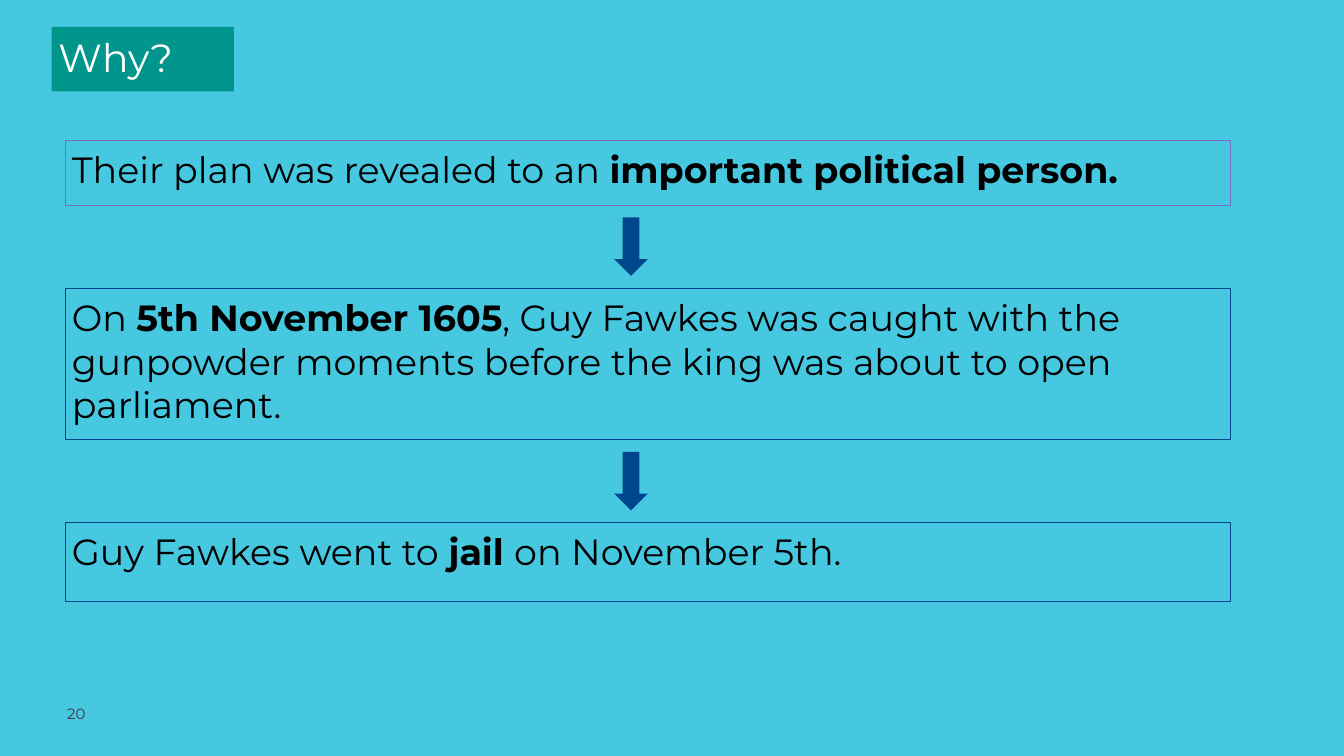
import pptx
import pptx.dml.color
import pptx.enum.shapes
import pptx.enum.text
import pptx.util

RGBColor = pptx.dml.color.RGBColor
SKY = RGBColor(0x46, 0xC8, 0xE1)
TEAL = RGBColor(0x00, 0x96, 0x8C)
NAVY = RGBColor(0x00, 0x46, 0x8C)
VIOLET = RGBColor(0x78, 0x6E, 0xC8)
PLUM = RGBColor(0x4B, 0x32, 0x41)
WHITE = RGBColor(0xFF, 0xFF, 0xFF)
BLACK = RGBColor(0x00, 0x00, 0x00)

CELL = pptx.util.Inches(0.2)
LINK_HEIGHT = 6.2
ARROW_WIDTH, ARROW_HEIGHT = 2.5, 4.35
ARROW_SHIFT = -1.25

EVENTS = [
    (4.8, VIOLET, [("Their plan was revealed to an ", False),
                   ("important political person.", True)]),
    (11.25, NAVY, [("On ", False), ("5th November 1605", True),
                   (", Guy Fawkes was caught with the gunpowder moments before "
                    "the king was about to open parliament.", False)]),
    (5.85, NAVY, [("Guy Fawkes went to ", False), ("jail ", True),
                  ("on November 5th.", False)]),
]


def cells(*box):
    return [round(value * CELL) for value in box]


def write(holder, runs, size, color, inset=0.5):
    frame = holder.text_frame
    frame.word_wrap = True
    frame.auto_size = pptx.enum.text.MSO_AUTO_SIZE.NONE
    frame.vertical_anchor = pptx.enum.text.MSO_ANCHOR.TOP
    frame.margin_left = frame.margin_right = round(inset * CELL)
    frame.margin_top = frame.margin_bottom = round(inset * CELL)
    paragraph = frame.paragraphs[0]
    paragraph.alignment = pptx.enum.text.PP_ALIGN.LEFT
    paragraph.line_spacing = 1.0
    for words, bold in runs:
        run = paragraph.add_run()
        run.text = words
        run.font.name = "Montserrat"
        run.font.size = pptx.util.Pt(size)
        run.font.bold = bold
        run.font.color.rgb = color


def place_heading(slide, box):
    heading = slide.shapes.title
    heading.left, heading.top, heading.width, heading.height = cells(*box)
    heading.fill.solid()
    heading.fill.fore_color.rgb = TEAL
    write(heading, [("Why?", False)], 42, WHITE)


def place_event(slide, box, outline, runs):
    event = slide.shapes.add_shape(
        pptx.enum.shapes.MSO_SHAPE.RECTANGLE, *cells(*box))
    event.shadow.inherit = False
    event.fill.background()
    event.line.color.rgb = outline
    event.line.width = pptx.util.Pt(0.75)
    write(event, runs, 39, BLACK)


def place_arrow(slide, box):
    left, top, width, height = box
    arrow = slide.shapes.add_shape(
        pptx.enum.shapes.MSO_SHAPE.DOWN_ARROW,
        *cells(left + (width - ARROW_WIDTH) / 2 + ARROW_SHIFT,
               top + (height - ARROW_HEIGHT) / 2, ARROW_WIDTH, ARROW_HEIGHT))
    arrow.shadow.inherit = False
    arrow.fill.solid()
    arrow.fill.fore_color.rgb = NAVY
    arrow.line.fill.background()


def place_chain(slide, left, top, width):
    for step, (height, outline, runs) in enumerate(EVENTS):
        if step:
            place_arrow(slide, (left, top, width, LINK_HEIGHT))
            top += LINK_HEIGHT
        place_event(slide, (left, top, width, height), outline, runs)
        top += height


def place_page_number(slide, box):
    number = slide.shapes.add_textbox(*cells(*box))
    write(number, [("20", False)], 16, PLUM, inset=0)


def main():
    deck = pptx.Presentation()
    deck.slide_width, deck.slide_height = cells(100, 56.25)
    slide = deck.slides.add_slide(deck.slide_layouts.get_by_name("Title Only"))
    slide.background.fill.solid()
    slide.background.fill.fore_color.rgb = SKY
    place_heading(slide, (3.85, 2, 13.55, 4.8))
    place_chain(slide, 4.85, 10.45, 86.7)
    place_page_number(slide, (5, 52.4, 7.85, 1.95))
    deck.save("out.pptx")


if __name__ == "__main__":
    main()
